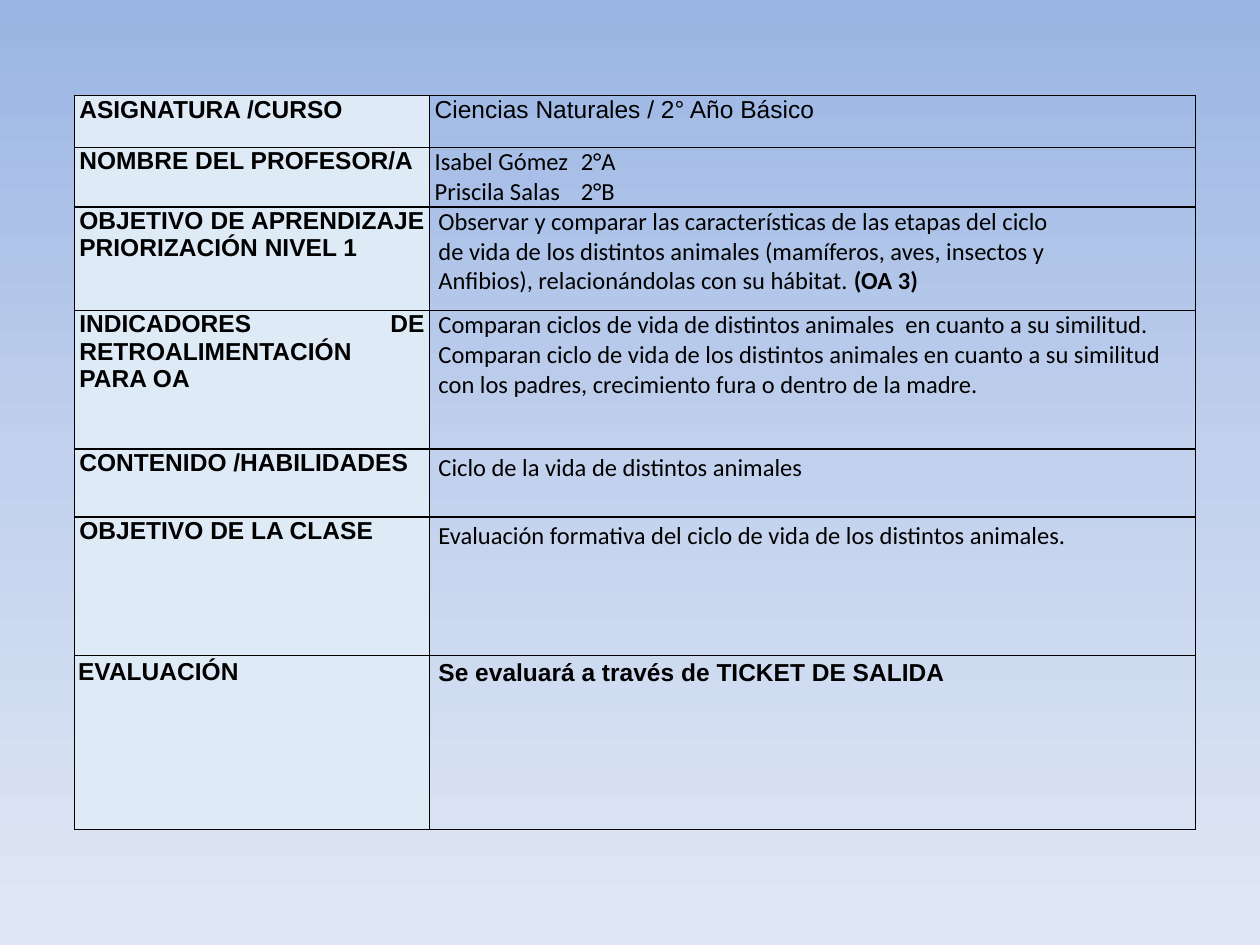
import copy
import pptx
import pptx.util
import pptx.oxml
import pptx.oxml.ns
import pptx.dml.color
import pptx.enum.text

Inches, Pt = pptx.util.Inches, pptx.util.Pt
RGB = pptx.dml.color.RGBColor.from_string
ALIGN = pptx.enum.text.PP_ALIGN
qn = pptx.oxml.ns.qn

THEME = {
    "ink": "000000", "label": "DEEAF6", "size": 14, "line": 1,
    "head": "Arial", "body": "Calibri",
    "back": [(0, "9AB5E4"), (0.5, "C2D1ED"), (1, "E1E8F5")],
}

# Content: row height, label, lines of the value, format of the value
# A line is a list of (text, bold) runs
NEAR = {"pad": 0.04}
WIDE = {"pad": 0.07}
TALL = {"pad": 0.07, "align": ALIGN.JUSTIFY, "space": 1.15}
ROWS = [
    (0.41, "ASIGNATURA /CURSO",
     [[("Ciencias Naturales / 2° Año Básico", False)]],
     {**NEAR, "font": THEME["head"], "align": ALIGN.JUSTIFY}),
    (0.47, "NOMBRE DEL PROFESOR/A",
     [[("Isabel Gómez\t2°A", False)], [("Priscila Salas\t2°B", False)]],
     {**NEAR, "tab": 1.16}),
    (0.82, "OBJETIVO DE APRENDIZAJE PRIORIZACIÓN NIVEL 1",
     [[("Observar y comparar las características de las etapas del ciclo", False)],
      [("de vida de los distintos animales (mamíferos, aves, insectos y", False)],
      [("Anfibios), relacionándolas con su hábitat. ", False), ("(OA 3)", True)]],
     WIDE),
    (1.1, "INDICADORES DE RETROALIMENTACIÓN PARA OA",
     [[("Comparan ciclos de vida de distintos animales  en cuanto a su similitud.", False)],
      [("Comparan ciclo de vida de los distintos animales en cuanto a su similitud "
        "con los padres, crecimiento fura o dentro de la madre.", False)]],
     WIDE),
    (0.54, "CONTENIDO /HABILIDADES",
     [[("Ciclo de la vida de distintos animales", False)]], TALL),
    (1.1, "OBJETIVO DE LA CLASE",
     [[("Evaluación formativa del ciclo de vida de los distintos animales.", False)]],
     TALL),
    (1.38, "EVALUACIÓN",
     [[("Se evaluará a través de TICKET DE SALIDA", True)]],
     {**TALL, "font": THEME["head"]}),
]
COLS = [2.82, 6.08]
LEFT, TOP = 0.59, 0.76
LABEL = {"pad": 0.04, "font": THEME["head"], "align": ALIGN.JUSTIFY,
         "fill": THEME["label"]}
LAST = {**LABEL, "pad": 0.03, "top": 0.02}


def put(obj, vals):
    for name, val in vals.items():
        setattr(obj, name, val)


def frame(cell):
    """Draw a line on all four sides of a cell."""
    props = cell._tc.get_or_add_tcPr()
    for side in "LRTB":
        props.append(pptx.oxml.parse_xml(
            f'<a:ln{side} {pptx.oxml.ns.nsdecls("a")} w="{Pt(THEME["line"])}">'
            f'<a:solidFill><a:srgbClr val="{THEME["ink"]}"/></a:solidFill>'
            f'</a:ln{side}>'))


def write(cell, lines, form):
    """Frame, fill and letter one cell."""
    frame(cell)
    if "fill" in form:
        cell.fill.solid()
        cell.fill.fore_color.rgb = RGB(form["fill"])
    else:
        cell.fill.background()
    side, edge = Inches(form["pad"]), Inches(form.get("top", 0))
    put(cell, {"margin_left": side, "margin_right": side,
               "margin_top": edge, "margin_bottom": edge})
    text = cell.text_frame
    for num, line in enumerate(lines):
        para = text.add_paragraph() if num else text.paragraphs[0]
        put(para, {"alignment": form.get("align", ALIGN.LEFT),
                   "line_spacing": form.get("space")})
        if "tab" in form:
            para._p.get_or_add_pPr().append(pptx.oxml.parse_xml(
                f'<a:tabLst {pptx.oxml.ns.nsdecls("a")}>'
                f'<a:tab pos="{Inches(form["tab"])}" algn="l"/></a:tabLst>'))
        for words, bold in line:
            run = para.add_run()
            run.text = words
            put(run.font, {"name": form.get("font", THEME["body"]),
                           "size": Pt(THEME["size"]), "bold": bold})
            run.font.color.rgb = RGB(THEME["ink"])


def paint(slide):
    """Shade the background from top to bottom."""
    fill = slide.background.fill
    fill.gradient()
    fill.gradient_angle = 270
    first = next(slide.element.iter(qn("a:gs")))
    first.addnext(copy.deepcopy(first))
    for stop, (pos, hue) in zip(fill.gradient_stops, THEME["back"]):
        stop.position = pos
        stop.color.rgb = RGB(hue)


def main():
    deck = pptx.Presentation()
    put(deck, {"slide_width": Inches(10), "slide_height": Inches(7.5)})
    slide = deck.slides.add_slide(deck.slide_layouts[6])
    paint(slide)

    # Lesson table
    tall = sum(row[0] for row in ROWS)
    table = slide.shapes.add_table(
        len(ROWS), len(COLS), Inches(LEFT), Inches(TOP),
        Inches(sum(COLS)), Inches(tall)).table
    put(table, {"first_row": False, "horz_banding": False})
    for col, width in zip(table.columns, COLS):
        col.width = Inches(width)
    for num, (high, label, lines, form) in enumerate(ROWS):
        table.rows[num].height = Inches(high)
        write(table.cell(num, 0), [[(label, True)]],
              LAST if num == len(ROWS) - 1 else LABEL)
        write(table.cell(num, 1), lines, form)

    deck.save("out.pptx")


if __name__ == "__main__":
    main()
